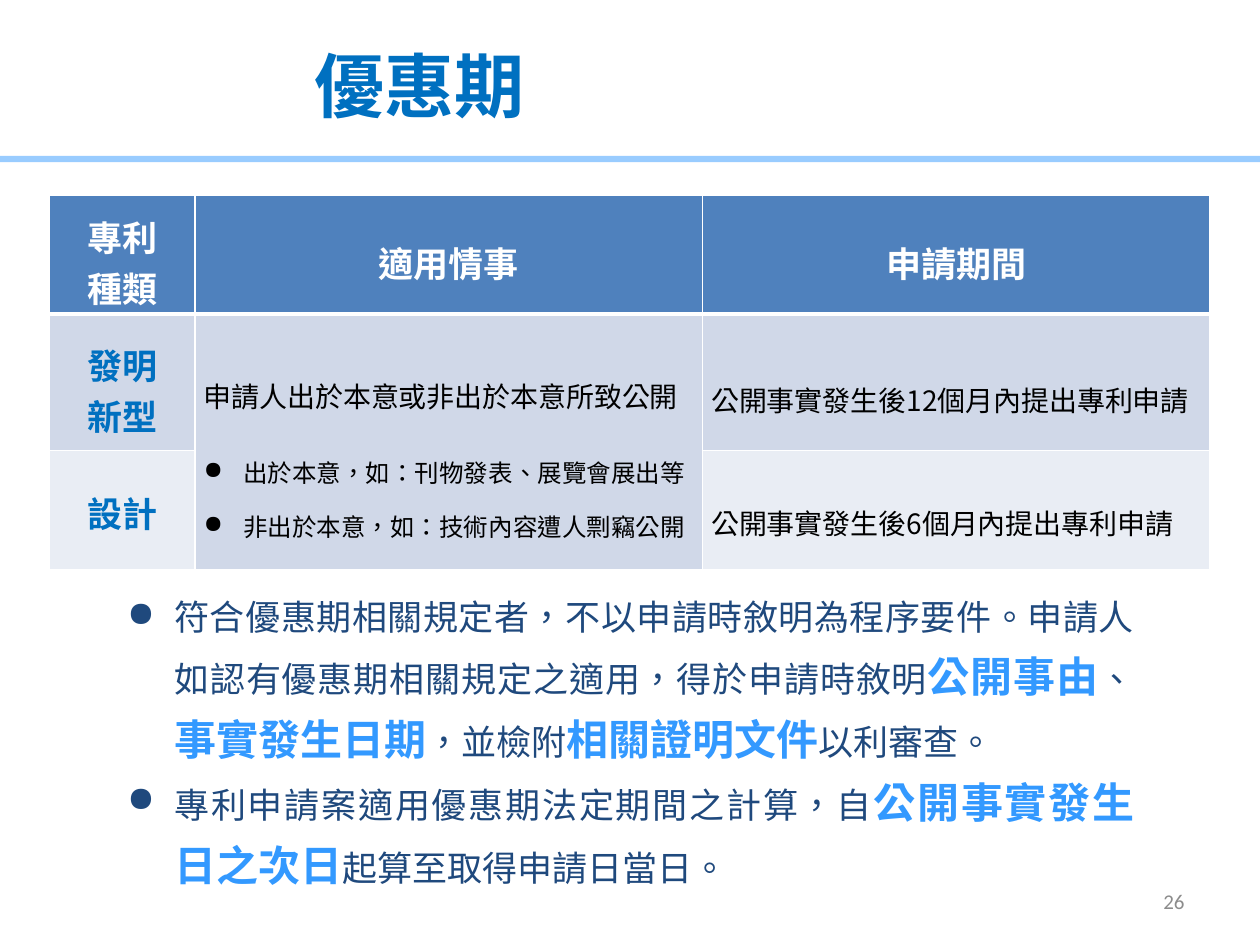
"""Build the slide on the patent grace period."""
from dataclasses import dataclass
from typing import Optional

from lxml.etree import SubElement
from pptx import Presentation
from pptx.dml.color import RGBColor
from pptx.enum.shapes import MSO_SHAPE
from pptx.enum.text import MSO_ANCHOR, MSO_AUTO_SIZE, PP_ALIGN
from pptx.oxml.ns import qn
from pptx.util import Pt

CJK = "Noto Sans CJK SC"
WHITE, BLACK, BLUE = "FFFFFF", "000000", "0070C0"
HEADER, BAND, LIGHT_BAND = "4F81BD", "D0D8E8", "E9EDF4"
NAVY, HIGHLIGHT = "1F497D", "3399FF"
COLUMN_WIDTHS = (83, 290, 290)
ROW_HEIGHTS = (68, 78, 68)


@dataclass(frozen=True)
class Span:
    text: str
    size: float
    color: str
    bold: bool = False
    font: str = CJK


@dataclass(frozen=True)
class Line:
    spans: tuple[Span, ...]
    align: Optional[PP_ALIGN] = None
    spacing: Optional[float] = None
    indent: float = 0
    before: float = 0


@dataclass(frozen=True)
class Entry:
    row: int
    column: int
    lines: tuple[Line, ...]
    fill: str


def rgb(color: str) -> RGBColor:
    return RGBColor.from_string(color)


def write_lines(frame, lines: tuple[Line, ...]) -> None:
    for index, line in enumerate(lines):
        paragraph = frame.paragraphs[0] if index == 0 else frame.add_paragraph()
        if line.indent:
            properties = paragraph._p.get_or_add_pPr()
            properties.set("marL", str(Pt(line.indent)))
            properties.set("indent", str(-Pt(line.indent)))
            SubElement(properties, qn("a:buChar")).set("char", "●")
        if line.align is not None:
            paragraph.alignment = line.align
        if line.spacing:
            paragraph.line_spacing = line.spacing
        if line.before:
            paragraph.space_before = Pt(line.before)
        for span in line.spans:
            run = paragraph.add_run()
            run.text = span.text
            run.font.size = Pt(span.size)
            run.font.bold = span.bold
            run.font.name = span.font
            run.font.color.rgb = rgb(span.color)
            properties = run._r.get_or_add_rPr()
            properties.set("lang", "zh-TW")
            SubElement(properties, qn("a:ea")).set("typeface", span.font)


def add_text(slide, left: float, top: float, width: float, height: float,
             lines: tuple[Line, ...], anchor=MSO_ANCHOR.TOP):
    box = slide.shapes.add_textbox(Pt(left), Pt(top), Pt(width), Pt(height))
    frame = box.text_frame
    frame.word_wrap = True
    frame.vertical_anchor = anchor
    write_lines(frame, lines)
    return frame


def add_borders(cell, bottom: float) -> None:
    properties = cell._tc.get_or_add_tcPr()
    for side, width in (("L", 1), ("R", 1), ("T", 1), ("B", bottom)):
        border = SubElement(properties, qn(f"a:ln{side}"), w=str(Pt(width)))
        fill = SubElement(border, qn("a:solidFill"))
        SubElement(fill, qn("a:srgbClr"), val=WHITE)


def label_lines(color: str, *labels: str) -> tuple[Line, ...]:
    return tuple(Line((Span(label, 20, color, True),), PP_ALIGN.CENTER)
                 for label in labels)


def detail(text: str, size: float = 16, indent: float = 0, before: float = 0) -> Line:
    return Line((Span(text, size, BLACK),), PP_ALIGN.JUSTIFY, 1.5, indent, before)


def plain(text: str) -> Span:
    return Span(text, 20, NAVY)


def strong(text: str) -> Span:
    return Span(text, 24, HIGHLIGHT, True)


def note(*spans: Span) -> Line:
    return Line(spans, PP_ALIGN.JUSTIFY, Pt(36), 27)


ENTRIES = (
    Entry(0, 0, label_lines(WHITE, "專利", "種類"), HEADER),
    Entry(0, 1, label_lines(WHITE, "適用情事"), HEADER),
    Entry(0, 2, label_lines(WHITE, "申請期間"), HEADER),
    Entry(1, 0, label_lines(BLUE, "發明", "新型"), BAND),
    Entry(1, 1, (
        detail("申請人出於本意或非出於本意所致公開"),
        detail("出於本意，如：刊物發表、展覽會展出等", 14, 22.5, 12),
        detail("非出於本意，如：技術內容遭人剽竊公開", 14, 22.5),
    ), BAND),
    Entry(1, 2, (detail("公開事實發生後12個月內提出專利申請"),), BAND),
    Entry(2, 0, label_lines(BLUE, "設計"), LIGHT_BAND),
    Entry(2, 2, (detail("公開事實發生後6個月內提出專利申請"),), LIGHT_BAND),
)

NOTES = (
    note(
        plain("符合優惠期相關規定者，不以申請時敘明為程序要件。"
              "申請人如認有優惠期相關規定之適用，得於申請時敘明"),
        strong("公開事由"), plain("、"), strong("事實發生日期"),
        plain("，並檢附"), strong("相關證明文件"), plain("以利審查。"),
    ),
    note(
        plain("專利申請案適用優惠期法定期間之計算，自"),
        strong("公開事實發生日之次日"), plain("起算至取得申請日當日。"),
    ),
)


def add_period_table(slide) -> None:
    table = slide.shapes.add_table(
        len(ROW_HEIGHTS), len(COLUMN_WIDTHS), Pt(28.4), Pt(111.4),
        Pt(sum(COLUMN_WIDTHS)), Pt(sum(ROW_HEIGHTS))).table
    for column, width in zip(table.columns, COLUMN_WIDTHS):
        column.width = Pt(width)
    for row, height in zip(table.rows, ROW_HEIGHTS):
        row.height = Pt(height)
    table.cell(1, 1).merge(table.cell(2, 1))
    for entry in ENTRIES:
        cell = table.cell(entry.row, entry.column)
        cell.vertical_anchor = MSO_ANCHOR.MIDDLE
        cell.margin_left = cell.margin_right = Pt(5)
        cell.margin_top = Pt(3 if entry.row == 2 else 8.5)
        cell.margin_bottom = Pt(0)
        add_borders(cell, 3 if entry.row == 0 else 1)
        cell.fill.solid()
        cell.fill.fore_color.rgb = rgb(entry.fill)
        write_lines(cell.text_frame, entry.lines)


def main() -> None:
    presentation = Presentation()
    presentation.slide_width, presentation.slide_height = Pt(720), Pt(540)
    slide = presentation.slides.add_slide(presentation.slide_layouts[6])

    divider = slide.shapes.add_shape(
        MSO_SHAPE.RECTANGLE, Pt(-3), Pt(89), Pt(724.5), Pt(3.6))
    divider.shadow.inherit = False
    divider.fill.solid()
    divider.fill.fore_color.rgb = rgb("99CCFF")
    divider.line.fill.background()

    page_number = Span("26", 12, "8C8C8C", font="Calibri")
    add_text(slide, 516, 500.5, 168, 28.8,
             (Line((page_number,), PP_ALIGN.RIGHT),), MSO_ANCHOR.MIDDLE)
    title = Span("優惠期", 40, BLUE, True)
    add_text(slide, 172.8, 20.9, 521.3, 67.7, (Line((title,)),))
    add_period_table(slide)
    notes_frame = add_text(slide, 65.5, 324.7, 589.7, 189.4, NOTES)
    notes_frame.auto_size = MSO_AUTO_SIZE.SHAPE_TO_FIT_TEXT

    presentation.save("out.pptx")


if __name__ == "__main__":
    main()
